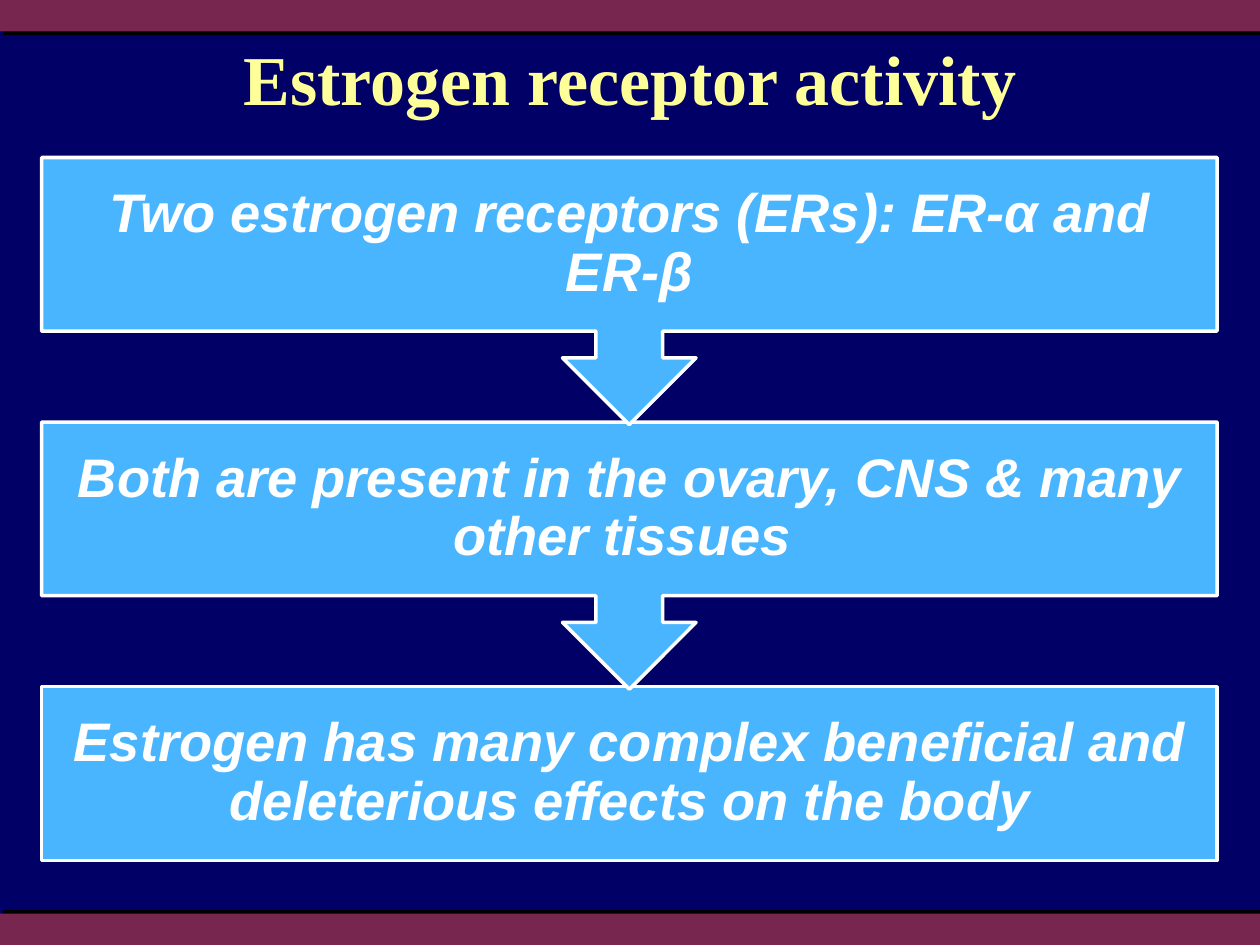
from lxml.etree import SubElement
from pptx import Presentation
from pptx.dml.color import RGBColor
from pptx.enum.shapes import MSO_SHAPE
from pptx.enum.text import MSO_ANCHOR, PP_ALIGN
from pptx.oxml.ns import qn
from pptx.util import Inches, Pt

TITLE = "Estrogen receptor activity"
STEPS = [
    "Two estrogen receptors (ERs): ER-α and ER-β",
    "Both are present in the ovary, CNS & many other tissues ",
    "Estrogen has many complex beneficial and deleterious effects on the body",
]
BANDS = [(0, 45), (7.25, 315)]
NAVY, PLUM, SKY, WHITE, YELLOW = "000066", "77274F", "4AB5FF", "FFFFFF", "FFFF99"
LEFT, TOP, WIDTH, PITCH = 0.33, 1.25, 9.33, 2.1
BOX_H, CALLOUT_H = 1.38, 2.12


def paint(fmt, color):
    fmt.solid()
    fmt.fore_color.rgb = RGBColor.from_string(color)


def write(s, text, size, font, color, inset, italic=False, anchor=MSO_ANCHOR.MIDDLE):
    tf = s.text_frame
    tf.word_wrap = True
    tf.vertical_anchor = anchor
    tf.margin_left = tf.margin_right = Inches(inset[0])
    tf.margin_top = tf.margin_bottom = Inches(inset[1])
    p = tf.paragraphs[0]
    p.alignment = PP_ALIGN.CENTER
    p.line_spacing = 0.9
    r = p.add_run()
    r.text = text
    r.font.name, r.font.size = font, Pt(size)
    r.font.bold, r.font.italic = True, italic
    paint(r.font.fill, color)


def add_box(kind, x, y, w, h, fill, line=None):
    s = slide.shapes.add_shape(kind, Inches(x), Inches(y), Inches(w), Inches(h))
    s.shadow.inherit = False
    paint(s.fill, fill)
    if line:
        paint(s.line.fill, line)
        s.line.width = Pt(2)
    else:
        s.line.fill.background()
    return s


def add_shadow(s, angle):
    effects = s._element.spPr.find(qn("a:effectLst"))
    shadow = SubElement(effects, qn("a:outerShdw"), dist=str(Pt(2.8)),
                        dir=str(angle * 60000), algn="ctr", rotWithShape="0")
    SubElement(shadow, qn("a:srgbClr"), val="000000")


prs = Presentation()
prs.slide_width, prs.slide_height = Inches(10), Inches(7.5)
slide = prs.slides.add_slide(prs.slide_layouts[5])
paint(slide.background.fill, NAVY)

for y, angle in BANDS:
    add_shadow(add_box(MSO_SHAPE.RECTANGLE, 0, y, 10, 0.25, PLUM), angle)

title = slide.shapes.title
title.left, title.top = Inches(0.35), Inches(0.33)
title.width, title.height = Inches(9.3), Inches(0.66)
write(title, TITLE, 40, "Times New Roman", YELLOW, (0.07, 0.03), anchor=MSO_ANCHOR.TOP)

for i, text in reversed(list(enumerate(STEPS))):
    last = i == len(STEPS) - 1
    kind = MSO_SHAPE.RECTANGLE if last else MSO_SHAPE.DOWN_ARROW_CALLOUT
    height = BOX_H if last else CALLOUT_H
    s = add_box(kind, LEFT, TOP + i * PITCH, WIDTH, height, SKY, WHITE)
    write(s, text, 31, "Arial", WHITE, (0.24, 0.24), italic=True)

prs.save("out.pptx")
